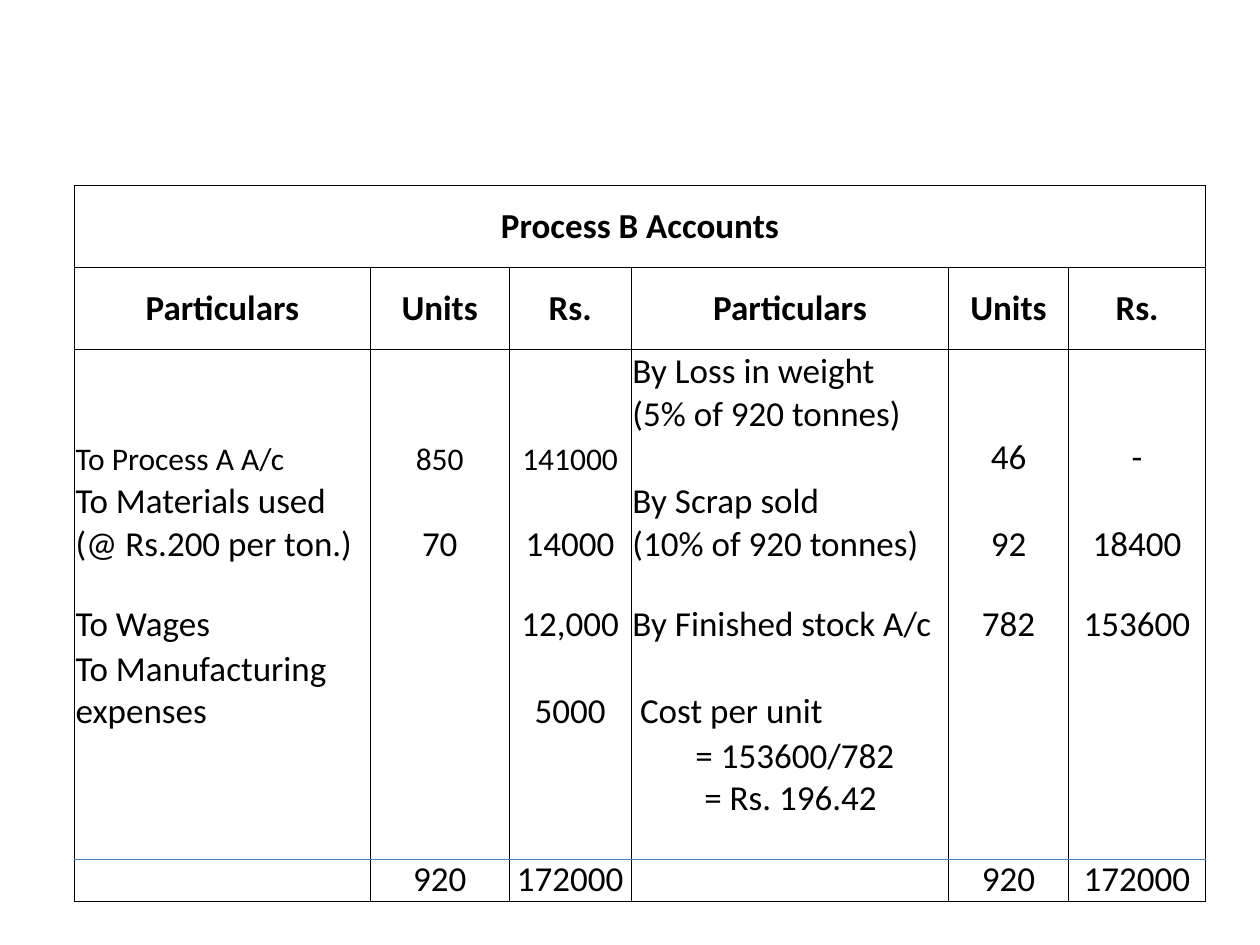
from lxml.etree import SubElement
from pptx import Presentation
from pptx.dml.color import RGBColor
from pptx.enum.shapes import MSO_CONNECTOR as Link
from pptx.enum.text import MSO_ANCHOR as Anchor, PP_ALIGN as Align
from pptx.oxml.ns import qn
from pptx.util import Inches, Pt

BLACK = RGBColor(0, 0, 0)
BLUE = RGBColor(0x4B, 0x7E, 0xBC)
FONT = "Calibri"

# Content: one tuple per row, one string per cell, "\n" between paragraphs
TITLE = "Process B Accounts"
HEADS = ("Particulars", "Units", "Rs.") * 2
ROWS = [
    (TITLE, "", "", "", "", ""),
    HEADS,
    ("To Process A A/c", "850", "141000",
     "By Loss in weight\n(5% of 920 tonnes)", "46", "-"),
    ("To Materials used\n(@ Rs.200 per ton.)", "70", "14000",
     "By Scrap sold\n(10% of 920 tonnes)", "92", "18400"),
    ("To Wages", "", "12,000", "By Finished stock A/c", "782", "153600"),
    ("To Manufacturing expenses", "", "5000", "Cost per unit", "", ""),
    ("", "", "", "= 153600/782\n= Rs. 196.42", "", ""),
    ("", "920", "172000", "", "920", "172000"),
]
INDENTS = {"Cost per unit": 0.06, "= 153600/782": 0.5, "= Rs. 196.42": 0.57}

# Layout
LEFT, TOP = 0.59, 1.47
WIDTHS = (2.35, 1.1, 0.97, 2.52, 0.95, 1.09)
HEIGHTS = (0.65, 0.65, 1.03, 0.69, 0.64, 0.69, 0.69, 0.64)
RULE_Y = 6.82
LAST = len(ROWS) - 1


def add_edges(cell, row):
    """Draw the column rules everywhere, the row rules only round heads and foot."""
    shown = {"L": True, "R": True, "T": row <= 2, "B": row <= 1 or row == LAST}
    props = cell._tc.get_or_add_tcPr()
    for side, on in shown.items():
        edge = SubElement(props, qn("a:ln" + side), w=str(Pt(0.5)))
        if on:
            fill = SubElement(edge, qn("a:solidFill"))
            SubElement(fill, qn("a:srgbClr"), val=str(BLACK))
        else:
            SubElement(edge, qn("a:noFill"))


def add_text(cell, text, row, col):
    head = row <= 1
    small = row == 2 and col < 3
    frame = cell.text_frame
    for i, line in enumerate(text.split("\n")):
        para = frame.paragraphs[0] if i == 0 else frame.add_paragraph()
        para.alignment = Align.CENTER if head or col % 3 else Align.LEFT
        if line in INDENTS:
            para._p.get_or_add_pPr().set("marL", str(Inches(INDENTS[line])))
        if line:
            run = para.add_run()
            run.text = line
            font = run.font
            font.name, font.size, font.bold = FONT, Pt(18 if small else 20), head
            font.color.rgb = BLACK


def add_grid(slide):
    table = slide.shapes.add_table(
        len(ROWS), len(WIDTHS), Inches(LEFT), Inches(TOP),
        Inches(sum(WIDTHS)), Inches(sum(HEIGHTS))).table
    table.first_row = table.horz_banding = False
    for col, width in zip(table.columns, WIDTHS):
        col.width = Inches(width)
    for row, height in zip(table.rows, HEIGHTS):
        row.height = Inches(height)
    table.cell(0, 0).merge(table.cell(0, len(WIDTHS) - 1))

    for r, texts in enumerate(ROWS):
        for c, text in enumerate(texts):
            cell = table.cell(r, c)
            cell.margin_left = cell.margin_right = cell.margin_top = Inches(0.01)
            cell.margin_bottom = 0
            cell.vertical_anchor = Anchor.MIDDLE if r <= 1 else Anchor.BOTTOM
            add_edges(cell, r)
            cell.fill.background()
            add_text(cell, text, r, c)
    # The loss entry starts at the top of its tall row
    table.cell(2, 3).vertical_anchor = Anchor.TOP


def add_rule(slide):
    rule = slide.shapes.add_connector(
        Link.STRAIGHT, Inches(LEFT), Inches(RULE_Y),
        Inches(LEFT + sum(WIDTHS)), Inches(RULE_Y))
    rule.line.color.rgb = BLUE
    rule.line.width = Pt(0.75)
    SubElement(rule._element.spPr, qn("a:effectLst"))


def main():
    deck = Presentation()
    deck.slide_width, deck.slide_height = Inches(10), Inches(7.5)
    slide = deck.slides.add_slide(deck.slide_layouts[6])
    add_grid(slide)
    add_rule(slide)  # line above the totals
    deck.save("out.pptx")


if __name__ == "__main__":
    main()
